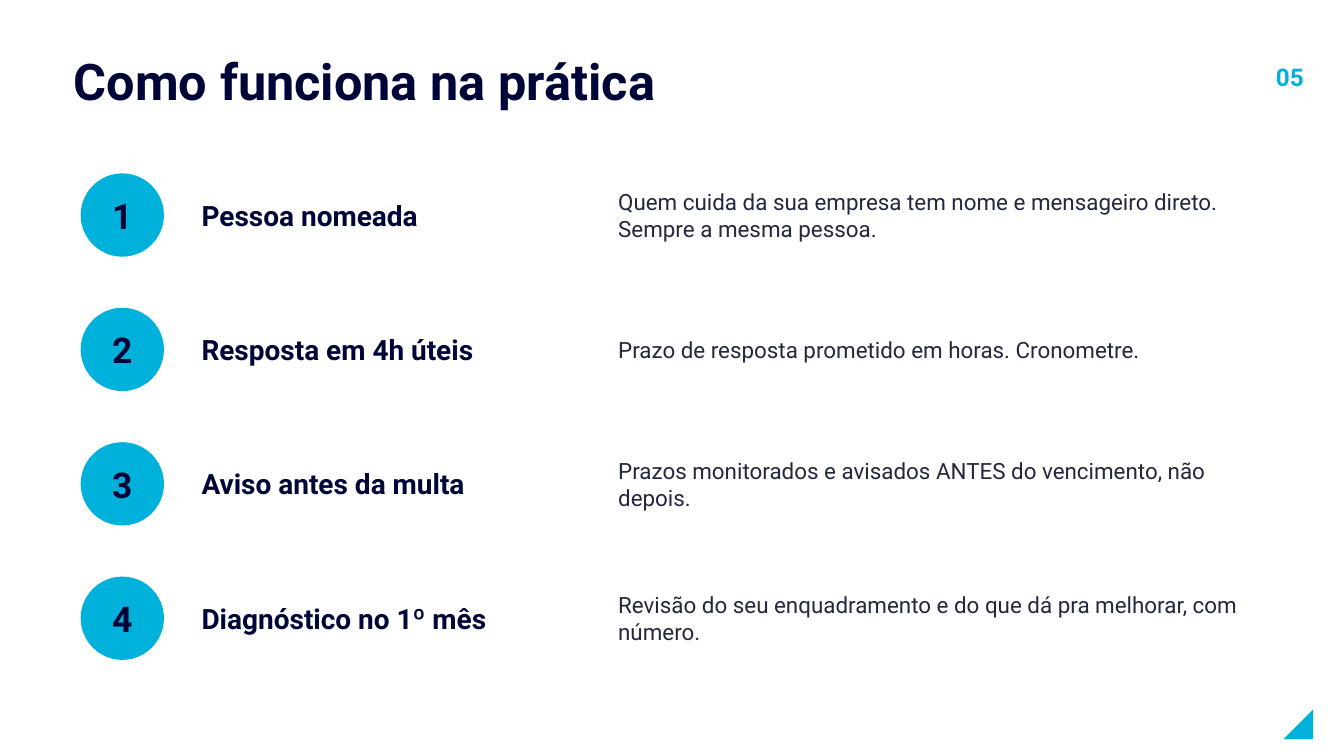
import pptx
import pptx.dml.color
import pptx.enum.shapes
import pptx.enum.text
import pptx.util

Inches = pptx.util.Inches
Align = pptx.enum.text.PP_ALIGN
Shape = pptx.enum.shapes.MSO_SHAPE

FONT = "Roboto"
COLORS = {"background": "FFFFFF", "navy": "000538", "cyan": "00B1DC", "body": "23283F"}
STEPS = [
    ("Pessoa nomeada",
     "Quem cuida da sua empresa tem nome e mensageiro direto. Sempre a mesma pessoa."),
    ("Resposta em 4h úteis",
     "Prazo de resposta prometido em horas. Cronometre."),
    ("Aviso antes da multa",
     "Prazos monitorados e avisados ANTES do vencimento, não depois."),
    ("Diagnóstico no 1º mês",
     "Revisão do seu enquadramento e do que dá pra melhorar, com número."),
]


def color(name):
    """Return the named palette colour."""
    return pptx.dml.color.RGBColor.from_string(COLORS[name])


def add_text(page, box, text, size, ink, bold=True, align=Align.LEFT):
    """Place one vertically centred line or paragraph without margins."""
    frame = page.shapes.add_textbox(*map(Inches, box)).text_frame
    frame.word_wrap = True
    frame.vertical_anchor = pptx.enum.text.MSO_ANCHOR.MIDDLE
    frame.margin_left = frame.margin_right = frame.margin_top = frame.margin_bottom = 0
    para = frame.paragraphs[0]
    para.alignment = align
    span = para.add_run()
    span.text = text
    span.font.name = FONT
    span.font.size = pptx.util.Pt(size)
    span.font.bold = bold
    span.font.color.rgb = color(ink)


def add_filled(page, kind, box):
    """Place a cyan preset shape without outline."""
    shape = page.shapes.add_shape(kind, *map(Inches, box))
    shape.shadow.inherit = False
    shape.fill.solid()
    shape.fill.fore_color.rgb = color("cyan")
    shape.line.fill.background()
    return shape


def add_header(page, box):
    """Place the title at the left and the page number at the right."""
    left, top, width, height = box
    add_text(page, (left, top, 8.4, height), "Como funciona na prática", 27, "navy")
    add_text(page, (left + width - 0.6, top + 0.02, 0.6, 0.5), "05", 13, "cyan",
             align=Align.RIGHT)


def add_corner(page, box):
    """Place the corner triangle with its right angle at the lower right."""
    triangle = add_filled(page, Shape.RIGHT_TRIANGLE, box)
    triangle._element.spPr.xfrm.set("flipH", "1")


def add_step(page, box, number, name, detail):
    """Place a numbered circle, the step name and its description."""
    left, top, width, height = box
    diameter = 0.62
    circle = (left, top + (height - diameter) / 2, diameter, diameter)
    add_filled(page, Shape.OVAL, circle)
    add_text(page, circle, str(number), 19, "navy", align=Align.CENTER)
    add_text(page, (left + 0.9, top, 3, height), name, 15, "navy")
    add_text(page, (left + 4, top, width - 4, height), detail, 12, "body", bold=False)


def add_steps(page, box):
    """Place the steps in evenly spaced rows."""
    left, top, width, height = box
    row_height = 0.8
    pitch = (height - row_height) / (len(STEPS) - 1)
    for index, (name, detail) in enumerate(STEPS):
        row = (left, top + index * pitch, width, row_height)
        add_step(page, row, index + 1, name, detail)


def main():
    """Build and save the deck."""
    deck = pptx.Presentation()
    deck.slide_width = Inches(10)
    deck.slide_height = Inches(10 * 9 / 16)
    page = deck.slides.add_slide(deck.slide_layouts[6])
    page.background.fill.solid()
    page.background.fill.fore_color.rgb = color("background")
    add_header(page, (0.55, 0.3, 9.15, 0.6))
    add_corner(page, (9.55, 5.28, 0.22, 0.22))
    add_steps(page, (0.6, 1.2, 8.9, 3.8))
    deck.save("out.pptx")


if __name__ == "__main__":
    main()
